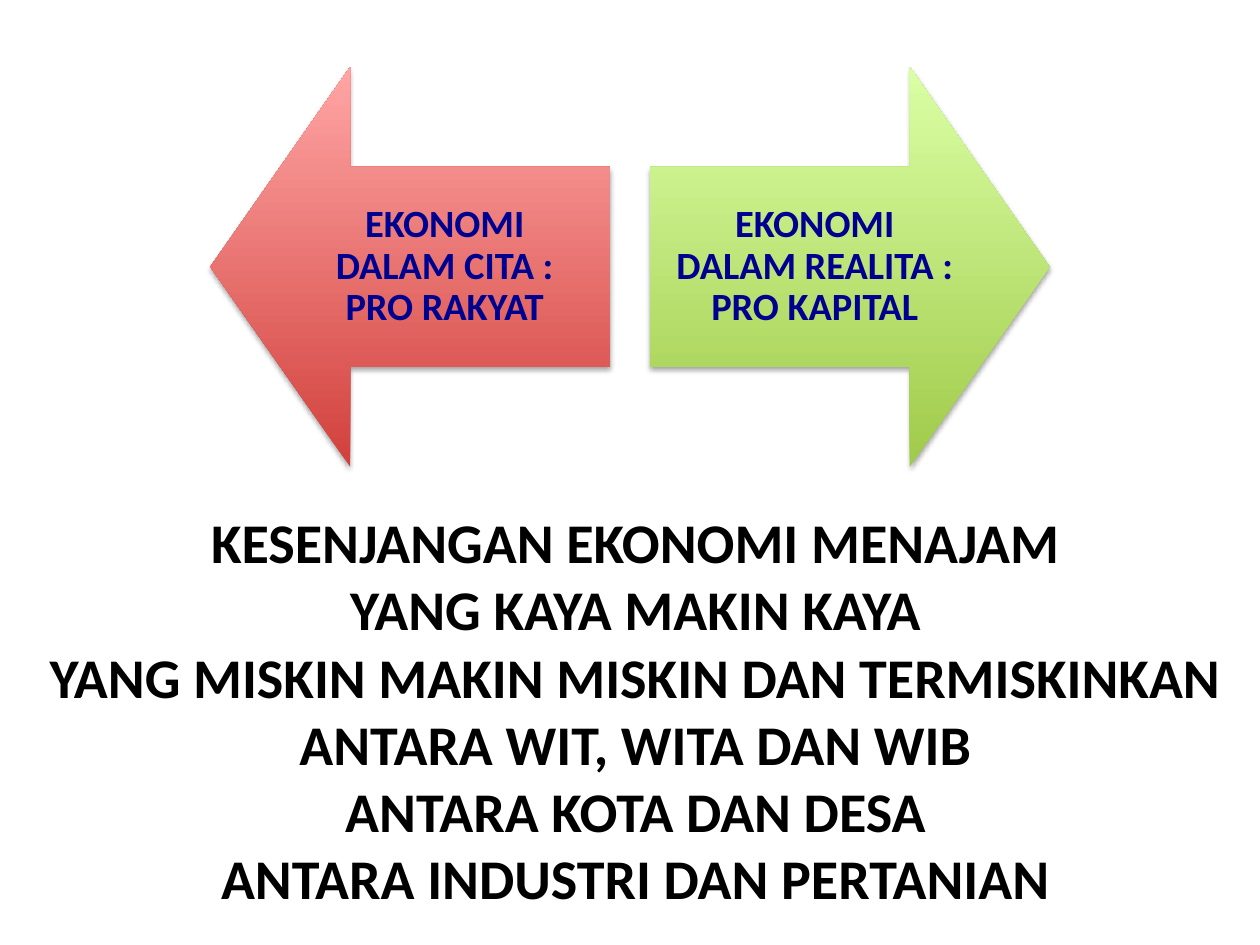
"""Build a slide that sets the ideal economy against the real one, with the widening gaps below."""
from lxml import etree
from pptx import Presentation
from pptx.dml.color import RGBColor
from pptx.enum.shapes import MSO_SHAPE
from pptx.enum.text import MSO_ANCHOR, MSO_AUTO_SIZE, PP_ALIGN
from pptx.oxml import parse_xml
from pptx.oxml.ns import nsdecls, qn
from pptx.util import Cm, Pt

UP_ARROW = MSO_SHAPE.UP_ARROW
MIDDLE = MSO_ANCHOR.MIDDLE
FIT_SHAPE = MSO_AUTO_SIZE.SHAPE_TO_FIT_TEXT
CENTER = PP_ALIGN.CENTER

COLORS = {
    "red_dark": "D1403C",
    "red_light": "FFA6A5",
    "green_dark": "A0CA4A",
    "green_light": "DAFFA5",
    "navy": "000090",
    "black": "000000",
}
SHADOW = (
    f'<a:effectLst {nsdecls("a")}>'
    '<a:outerShdw blurRad="40000" dist="23000" dir="5400000" rotWithShape="0">'
    f'<a:srgbClr val="{COLORS["black"]}"><a:alpha val="35000"/></a:srgbClr>'
    "</a:outerShdw></a:effectLst>"
)


def add_line(paragraph, text, size, color):
    paragraph.alignment = CENTER
    run = paragraph.add_run()
    run.text = text
    run.font.name = "Calibri"
    run.font.size = Pt(size)
    run.font.bold = True
    run.font.color.rgb = RGBColor.from_string(COLORS[color])


prs = Presentation()
prs.slide_width, prs.slide_height = Cm(25.4), Cm(19.05)
slide = prs.slides.add_slide(prs.slide_layouts[6])

ARROW_SIZE = 8.06
ARROW_TOP = 1.35
opposites = [
    (4.24, 5.64, 270, "red", "EKONOMI DALAM CITA : PRO RAKYAT"),
    (13.1, 13.1, 90, "green", "EKONOMI DALAM REALITA : PRO KAPITAL"),
]
diagram = slide.shapes.add_group_shape()
for arrow_left, label_left, rotation, hue, wording in opposites:
    arrow = diagram.shapes.add_shape(
        UP_ARROW, Cm(arrow_left), Cm(ARROW_TOP), Cm(ARROW_SIZE), Cm(ARROW_SIZE)
    )
    arrow.rotation = rotation
    arrow.adjustments[0] = 0.5
    arrow.adjustments[1] = 0.35
    arrow.fill.gradient()
    arrow.fill.gradient_angle = 90
    for stop, shade in zip(arrow.fill.gradient_stops, ("dark", "light")):
        stop.color.rgb = RGBColor.from_string(COLORS[f"{hue}_{shade}"])
    arrow.line.fill.background()
    properties = arrow._element.spPr
    properties.find(qn("a:gradFill")).set("rotWithShape", "0")
    properties.append(parse_xml(SHADOW))

    label = diagram.shapes.add_textbox(Cm(label_left), Cm(3.36), Cm(6.65), Cm(4.03))
    frame = label.text_frame
    frame.word_wrap = True
    frame.vertical_anchor = MIDDLE
    frame.margin_left = frame.margin_right = Cm(0.43)
    frame.margin_top = frame.margin_bottom = Cm(0.43)
    add_line(frame.paragraphs[0], wording, 22, "navy")
    frame.paragraphs[0].line_spacing = 0.9
    spacing = etree.Element(qn("a:spcAft"))
    etree.SubElement(spacing, qn("a:spcPct")).set("val", "35000")
    frame.paragraphs[0]._p.pPr.find(qn("a:lnSpc")).addnext(spacing)

gaps = [
    "KESENJANGAN EKONOMI MENAJAM",
    "YANG KAYA MAKIN KAYA",
    "YANG MISKIN MAKIN MISKIN DAN TERMISKINKAN",
    "ANTARA WIT, WITA DAN WIB",
    "ANTARA KOTA DAN DESA",
    "ANTARA INDUSTRI DAN PERTANIAN",
]
gap_list = slide.shapes.add_textbox(Cm(0.56), Cm(10.11), Cm(24.51), Cm(8.46)).text_frame
gap_list.word_wrap = False
gap_list.auto_size = FIT_SHAPE
for index, gap in enumerate(gaps):
    line = gap_list.add_paragraph() if index else gap_list.paragraphs[0]
    add_line(line, gap, 32, "black")

prs.save("out.pptx")
